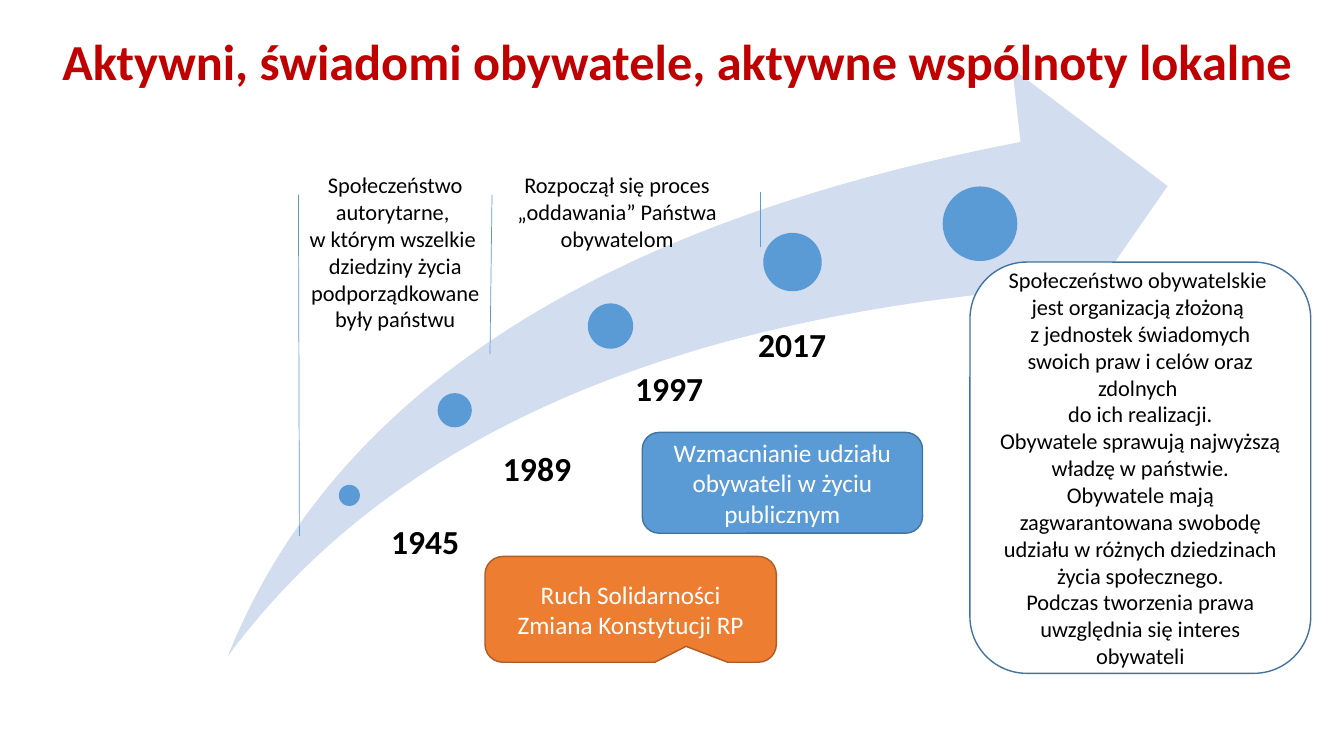
from dataclasses import dataclass

from lxml.etree import SubElement
from pptx import Presentation
from pptx.dml.color import RGBColor
from pptx.enum.shapes import MSO_CONNECTOR, MSO_SHAPE
from pptx.enum.text import MSO_ANCHOR, MSO_AUTO_SIZE, PP_ALIGN
from pptx.oxml.ns import qn
from pptx.util import Inches, Pt

COLORS = {
    "title": "C00000",
    "text": "000000",
    "white": "FFFFFF",
    "swoosh": "D2DEEF",
    "blue": "5B9BD5",
    "blue_edge": "43739E",
    "orange": "ED7D31",
    "orange_edge": "AF5C24",
}
TITLE = "Aktywni, świadomi obywatele, aktywne wspólnoty lokalne"


@dataclass
class Dot:
    left: float
    top: float
    diameter: float


@dataclass
class Divider:
    start: tuple[float, float]
    end: tuple[float, float]


@dataclass
class Label:
    place: tuple[float, float, float, float]
    text: str


@dataclass
class Panel:
    preset: MSO_SHAPE
    place: tuple[float, float, float, float]
    fill: str
    edge: str
    font: dict
    font_color: str
    paragraphs: list[str]
    adjustments: tuple[float, ...] = ()


BODY = {"name": "Calibri", "size": Pt(16), "bold": False}
PANEL = {**BODY, "size": Pt(18)}
YEAR = {**BODY, "size": Pt(24), "bold": True}
HEADING = {**YEAR, "size": Pt(36)}

DOTS = [
    Dot(3.36, 4.81, 0.21),
    Dot(4.34, 3.9, 0.34),
    Dot(5.83, 3.01, 0.45),
    Dot(7.57, 2.31, 0.58),
    Dot(9.35, 1.85, 0.74),
]
DIVIDERS = [
    Divider((4.86, 3.51), (4.88, 1.93)),
    Divider((2.97, 5.32), (2.96, 1.93)),
    Divider((7.54, 2.45), (7.54, 1.9)),
]
ERAS = [
    Label((2.96, 1.65, 1.92, 1.99),
          "Społeczeństwo autorytarne, \nw którym wszelkie \n"
          "dziedziny życia podporządkowane były państwu"),
    Label((4.82, 1.65, 2.6, 0.91),
          "Rozpoczął się proces „oddawania” Państwa obywatelom"),
]
YEARS = [
    Label((3.78, 5.12, 0.88, 0.5), "1945"),
    Label((4.89, 4.39, 0.88, 0.5), "1989"),
    Label((6.2, 3.6, 0.88, 0.5), "1997"),
    Label((7.42, 3.16, 0.88, 0.5), "2017"),
]
PANELS = [
    Panel(MSO_SHAPE.ROUNDED_RECTANGULAR_CALLOUT, (4.81, 5.52, 2.89, 1.05),
          "orange", "orange_edge", PANEL, "white",
          ["Ruch Solidarności", "Zmiana Konstytucji RP"], (0.19, 0.35, 0.17)),
    Panel(MSO_SHAPE.FLOWCHART_ALTERNATE_PROCESS, (6.37, 4.29, 2.78, 1),
          "blue", "blue_edge", PANEL, "white",
          ["Wzmacnianie udziału obywateli w życiu publicznym"]),
    Panel(MSO_SHAPE.FLOWCHART_ALTERNATE_PROCESS, (9.62, 2.6, 3.38, 4.08),
          "white", "blue_edge", BODY, "text",
          ["Społeczeństwo obywatelskie \njest organizacją złożoną \n"
           "z jednostek świadomych swoich praw i celów oraz zdolnych \n"
           "do ich realizacji.",
           "Obywatele sprawują najwyższą władzę w państwie.",
           "Obywatele mają zagwarantowana swobodę udziału "
           "w różnych dziedzinach życia społecznego.",
           "Podczas tworzenia prawa uwzględnia się interes obywateli"]),
]


def rgb(name: str) -> RGBColor:
    return RGBColor.from_string(COLORS[name])


def write(frame, paragraphs: list[str], font: dict, color: str,
          align=PP_ALIGN.CENTER) -> None:
    for index, text in enumerate(paragraphs):
        para = frame.add_paragraph() if index else frame.paragraphs[0]
        para.text = text
        para.alignment = align
        for span in para.runs:
            for name, value in font.items():
                setattr(span.font, name, value)
            span.font.color.rgb = rgb(color)


def add_filled(shapes, preset: MSO_SHAPE, place: tuple, fill: str,
               adjustments: tuple = ()):
    """Add a flat shape without an outline."""
    shape = shapes.add_shape(preset, *map(Inches, place))
    shape.shadow.inherit = False
    shape.fill.solid()
    shape.fill.fore_color.rgb = rgb(fill)
    shape.line.fill.background()
    for index, value in enumerate(adjustments):
        shape.adjustments[index] = value
    return shape


def add_divider(page, divider: Divider) -> None:
    line = page.shapes.add_connector(
        MSO_CONNECTOR.STRAIGHT, *map(Inches, divider.start + divider.end))
    line.line.color.rgb = rgb("blue")
    line.line.width = Pt(0.5)
    SubElement(line.element.spPr, qn("a:effectLst"))


def add_label(page, label: Label, font: dict, align, wrap: bool) -> None:
    box = page.shapes.add_textbox(*map(Inches, label.place))
    box.text_frame.word_wrap = wrap
    box.text_frame.auto_size = MSO_AUTO_SIZE.SHAPE_TO_FIT_TEXT
    write(box.text_frame, [label.text], font, "text", align)


def add_panel(page, panel: Panel) -> None:
    shape = add_filled(page.shapes, panel.preset, panel.place, panel.fill,
                       panel.adjustments)
    shape.line.color.rgb = rgb(panel.edge)
    shape.line.width = Pt(1)
    shape.text_frame.word_wrap = True
    shape.text_frame.vertical_anchor = MSO_ANCHOR.MIDDLE
    write(shape.text_frame, panel.paragraphs, panel.font, panel.font_color)


def add_timeline(page):
    group = page.shapes.add_group_shape()
    add_filled(group.shapes, MSO_SHAPE.SWOOSH_ARROW, (2.26, 0.68, 9.32, 5.83),
               "swoosh", (0.25, 0.25))
    for dot in DOTS:
        add_filled(group.shapes, MSO_SHAPE.OVAL,
                   (dot.left, dot.top, dot.diameter, dot.diameter), "blue")
    return group


def format_title(title) -> None:
    title.left, title.top = Inches(0.3), Inches(-0.03)
    title.width, title.height = Inches(12.84), Inches(1.34)
    frame = title.text_frame
    frame.auto_size = MSO_AUTO_SIZE.NONE
    frame.vertical_anchor = MSO_ANCHOR.MIDDLE
    write(frame, [TITLE], HEADING, "title")
    frame.paragraphs[0].line_spacing = 0.9


def main() -> None:
    deck = Presentation()
    deck.slide_width, deck.slide_height = Inches(13.33), Inches(7.5)
    page = deck.slides.add_slide(deck.slide_layouts[5])

    timeline = add_timeline(page)
    format_title(page.shapes.title)
    # The title lies over the arrow tip.
    timeline.element.addnext(page.shapes.title.element)
    for divider in DIVIDERS:
        add_divider(page, divider)
    for era in ERAS:
        add_label(page, era, BODY, PP_ALIGN.CENTER, True)
    for year in YEARS:
        add_label(page, year, YEAR, PP_ALIGN.LEFT, False)
    for panel in PANELS:
        add_panel(page, panel)
    deck.save("out.pptx")


if __name__ == "__main__":
    main()
